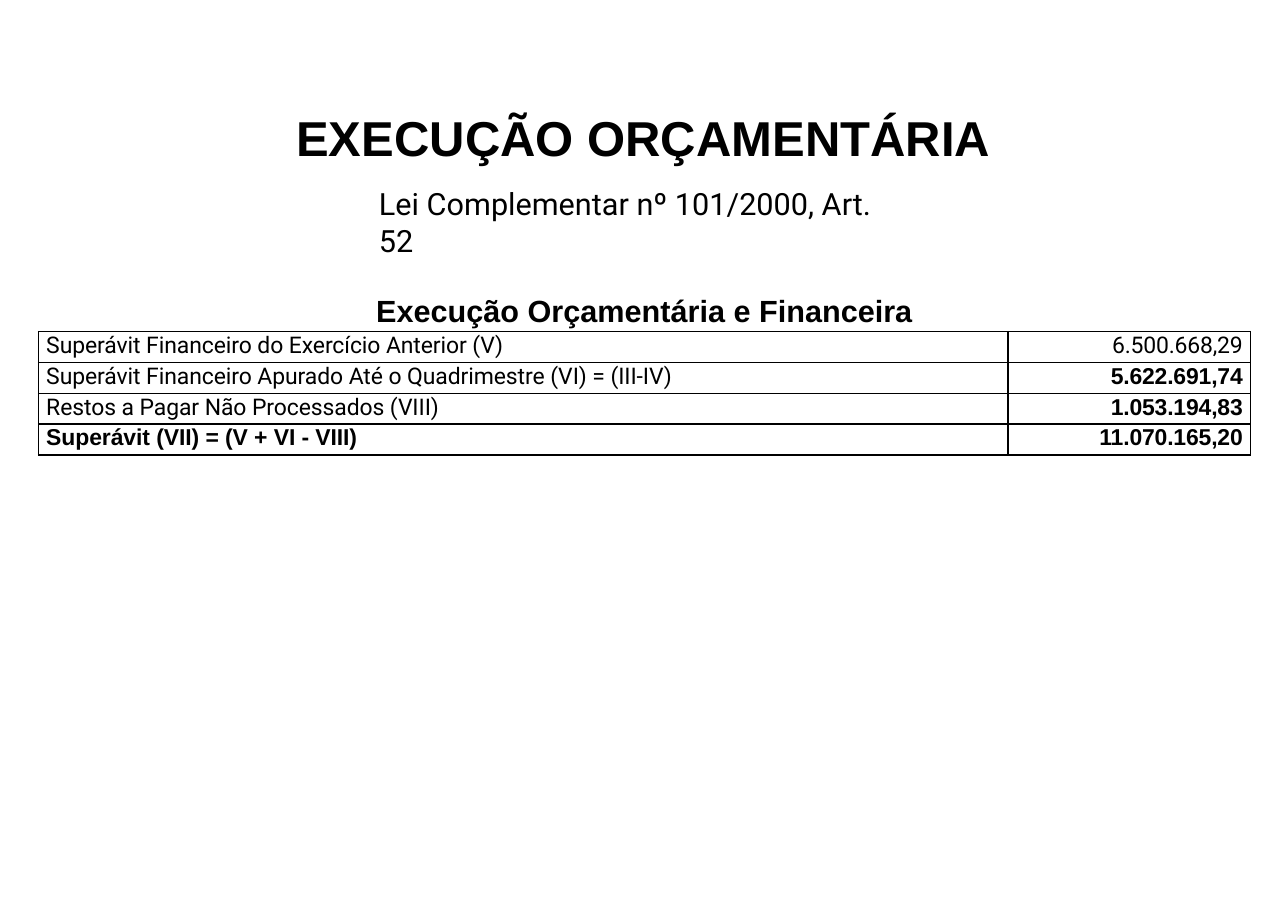
from lxml.etree import SubElement
from pptx import Presentation
from pptx.dml.color import RGBColor
from pptx.enum.text import PP_ALIGN as Align
from pptx.oxml.ns import qn
from pptx.util import Inches, Pt

BLACK = "000000"
HEADING = "Execução Orçamentária e Financeira"
# label, label is bold, value, value is bold
ROWS = [
    ("Superávit Financeiro do Exercício Anterior (V)", False, "6.500.668,29", False),
    ("Superávit Financeiro Apurado Até o Quadrimestre (VI) = (III-IV)", False,
     "5.622.691,74", True),
    ("Restos a Pagar Não Processados (VIII)", False, "1.053.194,83", True),
    ("Superávit (VII) = (V + VI - VIII)", True, "11.070.165,20", True),
]


def color(hex_code):
    return RGBColor.from_string(hex_code)


def write(frame, text, size, bold, align=Align.LEFT, before=0.0, tracking=0):
    """Fill a text frame; bold text is Arial, regular text is Roboto."""
    frame.text = text
    para = frame.paragraphs[0]
    para.alignment = align
    para.space_before = Pt(before)
    span = para.runs[0]
    span.font.name = "Arial" if bold else "Roboto"
    span.font.size = Pt(size)
    span.font.bold = bold
    span.font.color.rgb = color(BLACK)
    if tracking:
        span.font._element.set("spc", str(tracking))


def set_margins(holder, left=0.0, right=0.0, top=0.0):
    holder.margin_left, holder.margin_right = Inches(left), Inches(right)
    holder.margin_top, holder.margin_bottom = Inches(top), 0


def add_line_of_text(page, box, text, size, bold):
    frame = page.shapes.add_textbox(*map(Inches, box)).text_frame
    frame.word_wrap = True
    set_margins(frame, left=0.01, top=0.01)
    write(frame, text, size, bold, before=1)


def draw_borders(cell, sides):
    """Draw the named sides (of L, R, T, B) in black and clear the rest."""
    properties = cell._tc.get_or_add_tcPr()
    for side in "LRTB":
        line = SubElement(properties, qn(f"a:ln{side}"), w=str(Pt(1)))
        if side in sides:
            fill = SubElement(line, qn("a:solidFill"))
            SubElement(fill, qn("a:srgbClr"), val=BLACK)
        else:
            SubElement(line, qn("a:noFill"))
    cell.fill.background()


def add_budget_table(page, box):
    left, top, width, height = box
    heading_height = 0.33
    table = page.shapes.add_table(len(ROWS) + 1, 2, *map(Inches, box)).table
    table.first_row = table.horz_banding = False
    for column, share in zip(table.columns, (0.8, 0.2)):
        column.width = Inches(width * share)
    for index, row in enumerate(table.rows):
        row.height = Inches((height - heading_height) / len(ROWS) if index else heading_height)
        for cell in row.cells:
            draw_borders(cell, "LRTB" if index else "B")

    heading = table.cell(0, 0)
    heading.merge(table.cell(0, 1))
    set_margins(heading)
    write(heading.text_frame, HEADING, 20, True, Align.CENTER)
    heading.text_frame.paragraphs[0].line_spacing = Pt(22.1)

    for index, (label, label_bold, value, value_bold) in enumerate(ROWS, 1):
        name, amount = table.cell(index, 0), table.cell(index, 1)
        set_margins(name, left=0.07, top=0.01)
        write(name.text_frame, label, 15, label_bold, before=0.6, tracking=-5)
        set_margins(amount, right=0.07, top=0.01)
        write(amount.text_frame, value, 15, value_bold, Align.RIGHT, 0.6, -10)


def main():
    deck = Presentation()
    deck.slide_width, deck.slide_height = Inches(11.69), Inches(8.27)
    page = deck.slides.add_slide(deck.slide_layouts[6])
    add_line_of_text(page, (2.68, 0.97, 6.4, 0.56), "EXECUÇÃO ORÇAMENTÁRIA", 32, True)
    add_line_of_text(page, (3.43, 1.67, 4.84, 0.36),
                     "Lei Complementar nº 101/2000, Art. 52", 20, False)
    add_budget_table(page, (0.35, 2.68, 11, 1.45))
    deck.save("out.pptx")


if __name__ == "__main__":
    main()
